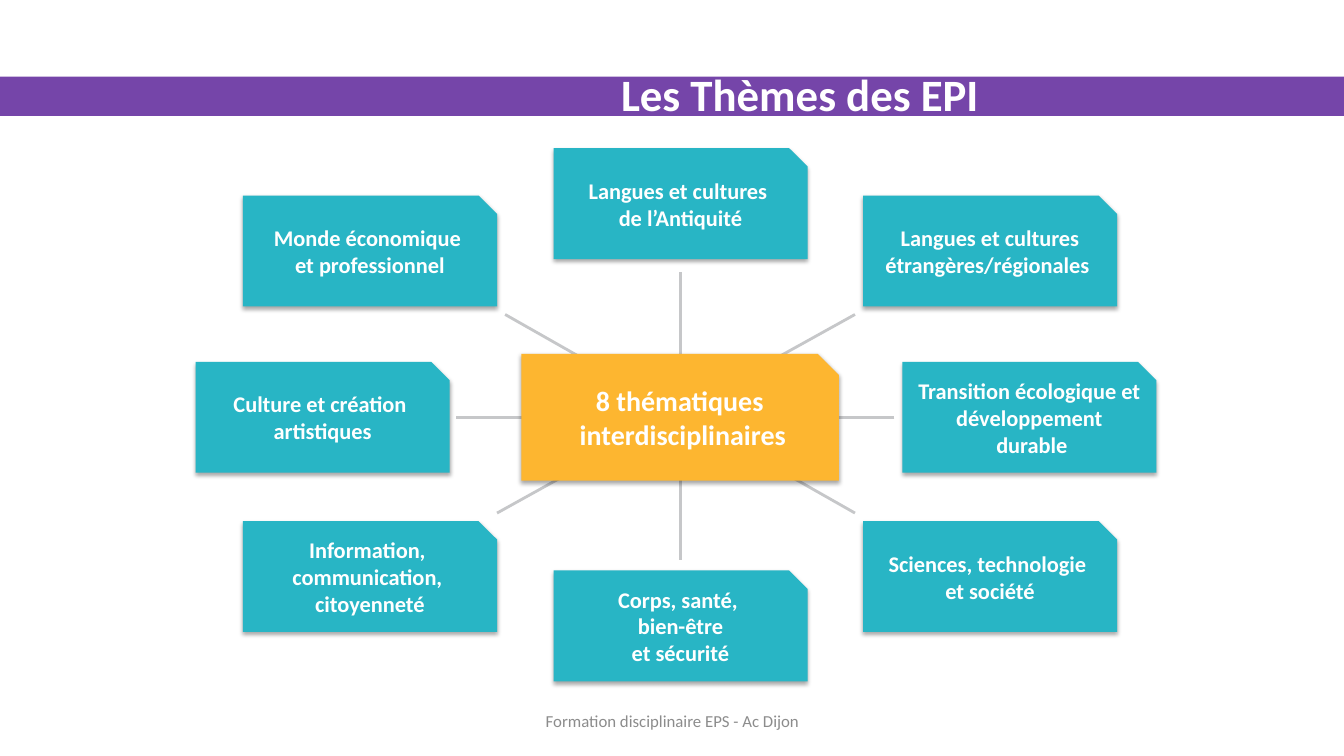
from lxml import etree
from pptx import Presentation
from pptx.dml.color import RGBColor
from pptx.enum.shapes import MSO_CONNECTOR as CONN, MSO_SHAPE as SHAPE
from pptx.enum.text import MSO_ANCHOR as ANCHOR, MSO_AUTO_SIZE as AUTO, PP_ALIGN as ALIGN
from pptx.oxml import parse_xml
from pptx.oxml.ns import nsdecls, qn
from pptx.util import Pt

PX = 9144  # 100 px to the inch
PURPLE = RGBColor(0x75, 0x45, 0xA9)
TEAL = RGBColor(0x28, 0xB5, 0xC5)
AMBER = RGBColor(0xFD, 0xB6, 0x30)
SILVER = RGBColor(0xC6, 0xC7, 0xC9)
GRAY = RGBColor(0x8C, 0x8C, 0x8C)
WHITE = RGBColor(0xFF, 0xFF, 0xFF)

TITLE_FONT = dict(size=Pt(32), bold=True)
HUB_FONT = dict(size=Pt(20), bold=True)
THEME_FONT = dict(size=Pt(16), bold=True)
FOOTER_FONT = dict(size=Pt(12), bold=False)

SHADOW = f"""<a:outerShdw {nsdecls('a')} blurRad="39370" dist="22860" dir="5400000"
 algn="t" rotWithShape="0"><a:srgbClr val="000000"><a:alpha val="35000"/></a:srgbClr></a:outerShdw>"""

# Positions are relative to the wheel box
WHEEL = (194, 147, 953, 529)
THEME_W, THEME_H = 252, 110
THEMES = [
    (47, 47, "Monde économique \net professionnel"),
    (355, 0, "Langues et cultures \nde l’Antiquité"),
    (662, 47, "Langues et cultures\nétrangères/régionales "),
    (701, 212, "Transition écologique et développement\n durable"),
    (47, 370, "Information, \ncommunication, \ncitoyenneté"),
    (662, 370, "Sciences, technologie \vet société"),
    (355, 419, "Corps, santé, \nbien-être\vet sécurité"),
    (0, 212, "Culture et création \nartistiques"),
]
HUB = (323, 204, 315, 126)
SPOKES = [
    (481, 123, 481, 409),
    (693, 267, 258, 267),
    (307, 165, 654, 362),
    (654, 165, 299, 362),
]


def emu(*lengths):
    return [n * PX for n in lengths]


def write(tf, text, font, color):
    tf.word_wrap = True
    tf.auto_size = AUTO.NONE
    tf.vertical_anchor = ANCHOR.MIDDLE
    tf.text = text
    for p in tf.paragraphs:
        p.alignment = ALIGN.CENTER
        for r in p.runs:
            r.font.name = "Calibri"
            r.font.color.rgb = color
            for key, value in font.items():
                setattr(r.font, key, value)


def add_filled(s, kind, box, color):
    sp = s.shapes.add_shape(kind, *emu(*box))
    sp.shadow.inherit = False
    sp.fill.solid()
    sp.fill.fore_color.rgb = color
    sp.line.fill.background()
    return sp


def add_card(s, box, text, font, color):
    """Snipped card whose text is centred on the whole card."""
    sp = add_filled(s, SHAPE.SNIP_1_RECTANGLE, box, color)
    sp.element.spPr.find(qn("a:effectLst")).append(parse_xml(SHADOW))
    write(sp.text_frame, text, font, WHITE)
    half_snip = box[3] // 12 * PX
    margins = dict(margin_left=half_snip, margin_bottom=half_snip, margin_top=0, margin_right=0)
    for key, value in margins.items():
        setattr(sp.text_frame, key, value)


def add_spoke(s, ends):
    line = s.shapes.add_connector(CONN.STRAIGHT, *emu(*ends))
    line.line.color.rgb = SILVER
    line.line.width = Pt(2)
    etree.SubElement(line.element.spPr, qn("a:effectLst"))


def add_wheel(s, box):
    left, top = box[:2]
    for x1, y1, x2, y2 in SPOKES:
        add_spoke(s, (left + x1, top + y1, left + x2, top + y2))
    for x, y, text in THEMES:
        add_card(s, (left + x, top + y, THEME_W, THEME_H), text, THEME_FONT, TEAL)
    x, y, w, h = HUB
    add_card(s, (left + x, top + y, w, h), "8 thématiques\n interdisciplinaires", HUB_FONT, AMBER)


def add_header(s, box):
    left, top, width, height = box
    bar = add_filled(s, SHAPE.RECTANGLE, box, PURPLE)
    s.shapes.element.insert(2, bar.element)  # behind the title
    title = s.shapes.title
    title.left, title.top, title.width, title.height = emu(left + 320, top - 46, 947, 125)
    write(title.text_frame, "Les Thèmes des EPI", TITLE_FONT, WHITE)


def add_footer(s, box):
    tb = s.shapes.add_textbox(*emu(*box))
    write(tb.text_frame, "Formation disciplinaire EPS - Ac Dijon", FOOTER_FONT, GRAY)


def main():
    prs = Presentation()
    prs.slide_width, prs.slide_height = emu(1333, 750)
    s = prs.slides.add_slide(prs.slide_layouts[5])
    add_header(s, (0, 76, 1333, 39))
    add_wheel(s, WHEEL)
    add_footer(s, (456, 695, 422, 40))
    prs.save("out.pptx")


if __name__ == "__main__":
    main()
